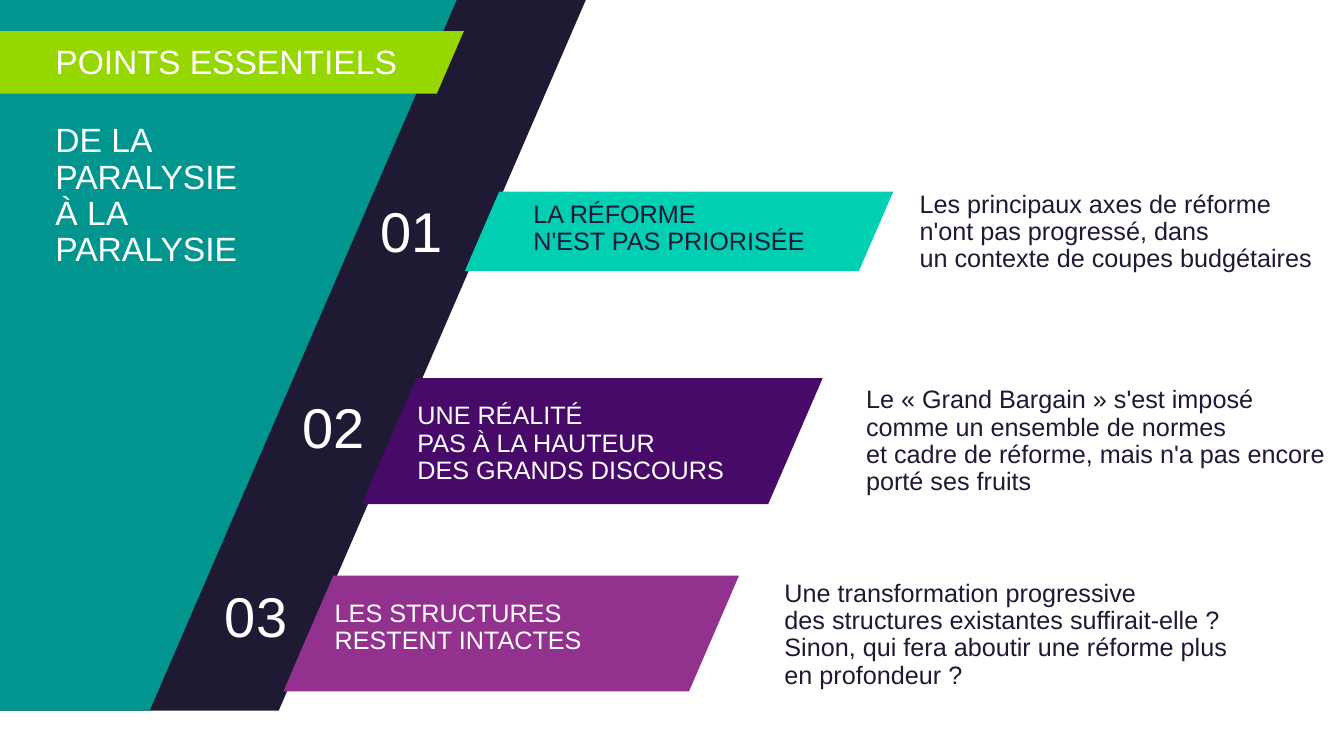
import pptx
import pptx.util
import pptx.dml.color
import pptx.enum.shapes
import pptx.enum.text

PX = 9144  # EMU per px, 100 px to the inch
SLANT = 0.432
COLORS = {
    "dark": "1E1A34", "teal": "00968F", "lime": "97D700", "mint": "00CFB4",
    "violet": "470A68", "plum": "93328E", "white": "FFFFFF",
}

# Bar box, bar colour, label colour, label offset and size, number top, note box
POINTS = [
    ((461, 190, 425, 79), "mint", "dark", (68, 10, 313, 39), 190,
     (912, 190, 395, 112),
     "LA RÉFORME\vN'EST PAS PRIORISÉE",
     "Les principaux axes de réforme n'ont pas progressé, dans\v"
     "un contexte de coupes budgétaires"),
    ((359, 375, 457, 125), "violet", "white", (55, 25, 403, 79), 384,
     (859, 384, 457, 129),
     "UNE RÉALITÉ\vPAS À LA HAUTEUR\vDES GRANDS DISCOURS",
     "Le « Grand Bargain » s'est imposé comme un ensemble de normes\v"
     "et cadre de réforme, mais n'a pas encore porté ses fruits"),
    ((281, 571, 452, 115), "plum", "white", (51, 25, 374, 37), 572,
     (778, 576, 538, 111),
     "LES STRUCTURES\vRESTENT INTACTES",
     "Une transformation progressive\vdes structures existantes suffirait-elle ?\v"
     "Sinon, qui fera aboutir une réforme plus\ven profondeur ?"),
]


def scale(box):
    return [pptx.util.Emu(v * PX) for v in box]


def rgb(name):
    return pptx.dml.color.RGBColor.from_string(COLORS[name])


def add_band(slide, box, color):
    kind = pptx.enum.shapes.MSO_SHAPE.PARALLELOGRAM
    band = slide.shapes.add_shape(kind, *scale(box))
    band.adjustments[0] = SLANT
    band.shadow.inherit = False
    band.fill.solid()
    band.fill.fore_color.rgb = rgb(color)
    band.line.fill.background()


def add_text(slide, box, text, size, color):
    frame = slide.shapes.add_textbox(*scale(box)).text_frame
    frame.word_wrap = True
    frame.margin_left = frame.margin_right = 0
    frame.margin_top = frame.margin_bottom = 0
    para = frame.paragraphs[0]
    para.text = text
    para.line_spacing = 0.9
    para.font.size = pptx.util.Pt(size)
    para.font.name = "Arial"
    para.font.color.rgb = rgb(color)
    return frame


def add_panel(slide, box):
    """Slanted side panel with its heading."""
    left, top, width, height = box
    add_band(slide, (left, top, width, height), "dark")
    add_band(slide, (left, top, width - 128, height), "teal")
    # Heading strip and subtitle
    add_band(slide, (left + 276, top + 31, 588, 62), "lime")
    add_text(slide, (left + 459, top + 45, 356, 32), "POINTS ESSENTIELS", 24, "white")
    add_text(slide, (left + 459, top + 123, 356, 100),
             "DE LA\vPARALYSIE\vÀ LA\vPARALYSIE", 24, "white")


def add_point(slide, index, point):
    """Number, coloured bar with label, and note."""
    bar, fill, ink, inner, top, aside, label, note = point
    add_band(slide, bar, fill)
    dx, dy, width, height = inner
    add_text(slide, (bar[0] + dx, bar[1] + dy, width, height), label, 18, ink)
    add_text(slide, aside, note, 18, "dark")
    # Numbers step left along the slanted edge
    frame = add_text(slide, (359 - 77 * index, top, 98, 77), f"{index + 1:02}", 40, "white")
    frame.margin_top = frame.margin_bottom = 5 * PX
    frame.paragraphs[0].line_spacing = 1.0
    frame.paragraphs[0].alignment = pptx.enum.text.PP_ALIGN.CENTER


def main():
    deck = pptx.Presentation()
    deck.slide_width, deck.slide_height = scale((1333, 750))
    slide = deck.slides.add_slide(deck.slide_layouts[6])
    add_panel(slide, (-404, 0, 985, 705))
    for index, point in enumerate(POINTS):
        add_point(slide, index, point)
    deck.save("out.pptx")


if __name__ == "__main__":
    main()
